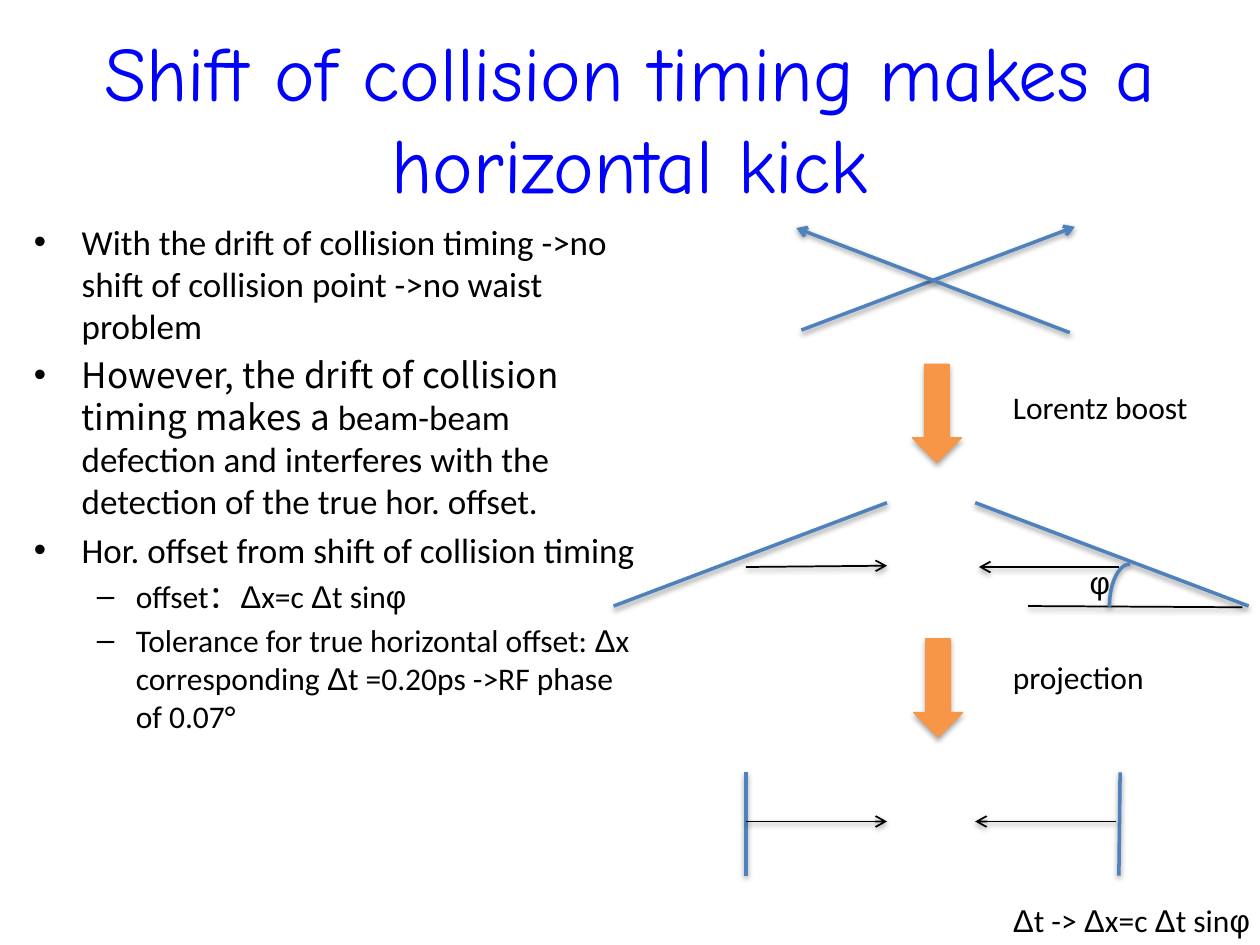
from dataclasses import dataclass

from lxml import etree
from pptx import Presentation, util as u
from pptx.dml.color import RGBColor
from pptx.enum import shapes, text
from pptx.oxml import parse_xml
from pptx.oxml.ns import nsdecls, qn


@dataclass(frozen=True)
class Theme:
    title: str = "0000FF"
    ink: str = "000000"
    beam: str = "4F81BD"
    step: str = "F79646"
    head: str = "Comic Neue"
    body: str = "Calibri"
    wide: str = "Noto Sans CJK JP"
    greek: str = "Arial"
    big: int = 44
    mid: int = 20
    small: int = 18


T = Theme()
OFFSET = (("Δ", T.greek), ("x=c ", T.body), ("Δ", T.greek),
          ("t sin", T.body), ("φ", T.greek))
NOTES = (
    (0, [("With the drift of collision timing ->no shift of collision point "
          "->no waist problem", T.body)]),
    (0, [("However, the drift of collision timing makes a ", T.wide),
         ("beam-beam defection and interferes with the detection of the true "
          "hor. offset.", T.body)]),
    (0, [("Hor. offset from shift of collision timing", T.body)]),
    (1, [("offset：", T.body), *OFFSET]),
    (1, [("Tolerance for true horizontal offset: ", T.body), ("Δ", T.greek),
         ("x corresponding ", T.body), ("Δ", T.greek),
         ("t =0.20ps ->RF phase of 0.07°", T.body)]),
)


def px(n):
    """One px is a hundredth of an inch."""
    return u.Emu(n * 9144)


def rgb(code):
    return RGBColor.from_string(code)


def put(par, runs, size, color=T.ink):
    for words, face in runs:
        run = par.add_run()
        run.text = words
        run.font.name = face
        run.font.size = u.Pt(size)
        run.font.color.rgb = rgb(color)


def shade(shape, alpha=38, drop=20000):
    """Cast a soft shadow straight down; call after the line is set."""
    props = shape._element.spPr
    for old in props.findall(qn("a:effectLst")):
        props.remove(old)
    props.append(parse_xml(
        f'<a:effectLst {nsdecls("a")}><a:outerShdw blurRad="40000" '
        f'dist="{drop}" dir="5400000" rotWithShape="0">'
        f'<a:srgbClr val="000000"><a:alpha val="{alpha * 1000}"/></a:srgbClr>'
        '</a:outerShdw></a:effectLst>'))


def line(parent, box, start, end, color=T.beam, width=2, arrow=False):
    x, y = box
    link = parent.add_connector(
        shapes.MSO_CONNECTOR.STRAIGHT, px(x + start[0]), px(y + start[1]),
        px(x + end[0]), px(y + end[1]))
    link.line.color.rgb = rgb(color)
    link.line.width = u.Pt(width)
    if arrow:
        etree.SubElement(link.line._get_or_add_ln(), qn("a:tailEnd"),
                         type="arrow")
    shade(link)


def thin(parent, box, start, end, arrow=True):
    line(parent, box, start, end, T.ink, 1, arrow)


def label(parent, box, runs):
    area = parent.add_textbox(*map(px, box))
    frame = area.text_frame
    frame.word_wrap = False
    frame.auto_size = text.MSO_AUTO_SIZE.SHAPE_TO_FIT_TEXT
    put(frame.paragraphs[0], runs, T.small)


def title(slide, box):
    name = slide.shapes.title
    name.left, name.top, name.width, name.height = map(px, box)
    frame = name.text_frame
    frame.auto_size = text.MSO_AUTO_SIZE.NONE
    frame.vertical_anchor = text.MSO_ANCHOR.MIDDLE
    par = frame.paragraphs[0]
    par.alignment = text.PP_ALIGN.CENTER
    put(par, [("Shift of collision timing makes a horizontal kick", T.head)],
        T.big, T.title)


def notes(parent, box):
    frame = parent.add_textbox(*map(px, box)).text_frame
    frame.word_wrap = True
    for i, (level, runs) in enumerate(NOTES):
        par = frame.add_paragraph() if i else frame.paragraphs[0]
        size = (T.mid, T.small)[level]
        par.level = level
        par.space_before = u.Pt(size * 0.2 if i else 0)
        props = par._p.get_or_add_pPr()
        props.set("marL", str(px((38, 81)[level])))
        props.set("indent", str(px((-38, -31)[level])))
        etree.SubElement(props, qn("a:buFont"), typeface="Arial")
        etree.SubElement(props, qn("a:buChar"), char="•–"[level])
        put(par, runs, size)


def crossing(parent, box):
    pair = parent.add_group_shape().shapes
    line(pair, box, (4, 82), (221, 0), arrow=True)
    line(pair, box, (217, 84), (0, 1), arrow=True)


def boosted(parent, box):
    """Tilted bunches moving head-on, with the crossing angle marked."""
    line(parent, box, (0, 82), (217, 0))
    line(parent, box, (504, 82), (287, 0))
    thin(parent, box, (105, 51), (217, 50))
    thin(parent, box, (401, 51), (290, 51))
    thin(parent, box, (329, 82), (499, 83), arrow=False)
    x, y = box
    arc = parent.add_shape(shapes.MSO_SHAPE.ARC, px(x + 376), px(y + 66),
                           px(68), px(33))
    arc.rotation = 270
    arc.fill.background()
    arc.line.color.rgb = rgb(T.beam)
    arc.line.width = u.Pt(2)
    shade(arc)
    label(parent, (x + 368, y + 43, 33, 40), [("φ", T.greek)])


def projected(parent, box):
    line(parent, box, (0, 0), (0, 82))
    line(parent, box, (297, 0), (296, 82))
    thin(parent, box, (0, 39), (112, 39))
    thin(parent, box, (294, 39), (182, 39))


def step(parent, box, words, width, drop):
    """A down arrow with its label to the right."""
    x, y = box
    arrow = parent.add_shape(shapes.MSO_SHAPE.DOWN_ARROW, px(x), px(y),
                             px(39), px(78))
    arrow.fill.solid()
    arrow.fill.fore_color.rgb = rgb(T.step)
    arrow.line.color.rgb = rgb(T.step)
    arrow.line.width = u.Pt(0.75)
    shade(arrow, 35, 23000)
    label(parent, (794, y + drop, width, 40), [(words, T.body)])


def main():
    deck = Presentation()
    deck.slide_width, deck.slide_height = px(1000), px(750)
    slide = deck.slides.add_slide(deck.slide_layouts[5])
    parts = slide.shapes
    title(slide, (50, 30, 900, 125))
    notes(parts, (17, 170, 503, 528))
    crossing(parts, (632, 180))
    step(parts, (724, 289), "Lorentz boost", 173, 14)
    boosted(parts, (487, 399))
    step(parts, (725, 507), "projection", 126, 10)
    projected(parts, (592, 613))
    label(parts, (794, 710, 226, 40),
          [OFFSET[0], ("t -> ", T.body), *OFFSET])
    deck.save("out.pptx")


if __name__ == "__main__":
    main()
